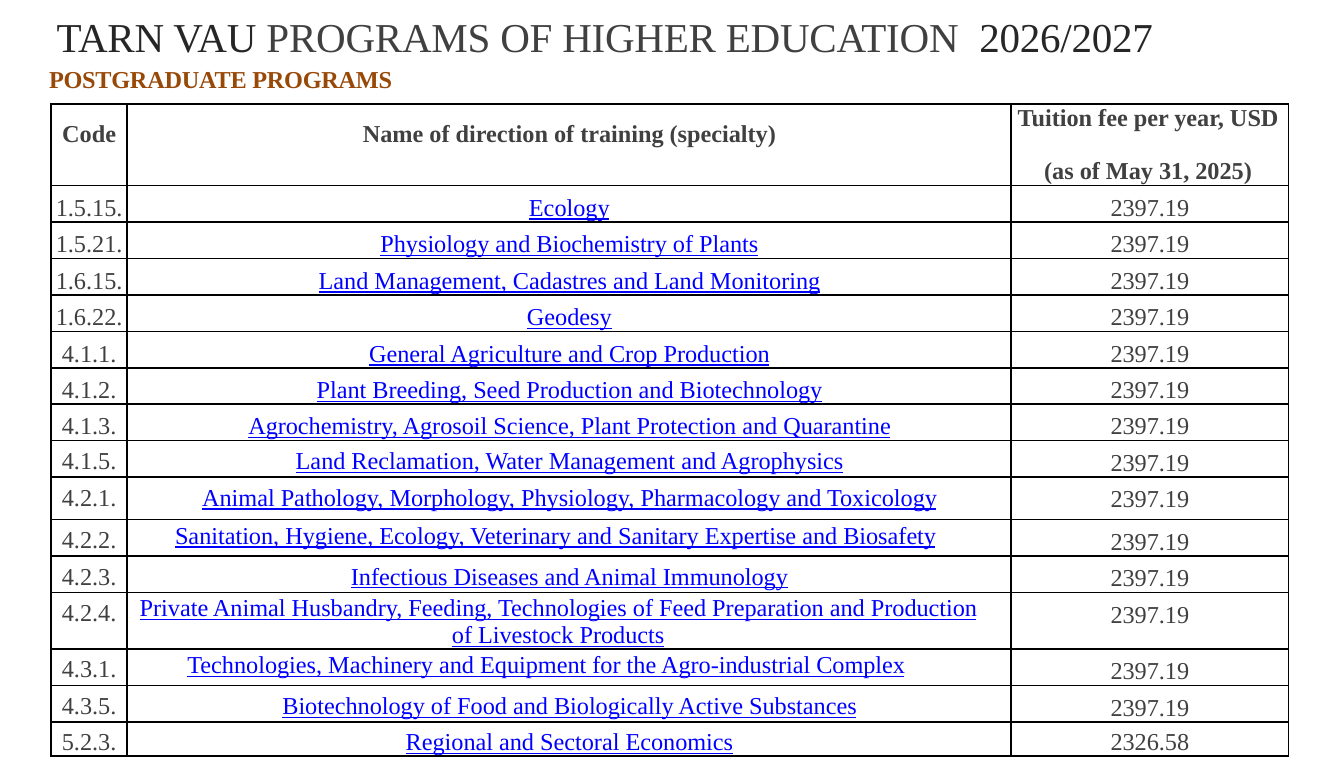
from dataclasses import dataclass

from lxml import etree
from pptx import Presentation
from pptx.dml.color import RGBColor
from pptx.enum.text import MSO_ANCHOR, MSO_AUTO_SIZE, PP_ALIGN
from pptx.oxml.ns import qn
from pptx.util import Pt

CENTER = PP_ALIGN.CENTER
LEFT = PP_ALIGN.LEFT
TOP = MSO_ANCHOR.TOP
NO_AUTOFIT = MSO_AUTO_SIZE.NONE

FONT = "Times New Roman"
DARK, GREY, BROWN, BLUE, BLACK = "262626", "404040", "984807", "0000FF", "000000"
HIGH_INSET, MIDDLE_INSET, LOW_INSET = 1.6, 4, 5
HEADER_INSET = 9.4
HEADER_HEIGHT = 43.7
COLUMN_WIDTHS = (40.9, 473.6, 148.5)


@dataclass
class Program:
    code: str
    name: str
    fee: str = "2397.19"
    height: float = 19.55
    code_inset: float = MIDDLE_INSET
    name_inset: float = MIDDLE_INSET
    name_right: float = 0
    fee_inset: float = LOW_INSET


LOW_PROGRAMS = [
    ("1.5.15.", "Ecology"),
    ("1.5.21.", "Physiology and Biochemistry of Plants"),
    ("1.6.15.", "Land Management, Cadastres and Land Monitoring"),
    ("1.6.22.", "Geodesy"),
    ("4.1.1.", "General Agriculture and Crop Production"),
    ("4.1.2.", "Plant Breeding, Seed Production and Biotechnology"),
    ("4.1.3.", "Agrochemistry, Agrosoil Science, Plant Protection and Quarantine"),
]
PROGRAMS = [
    Program(code, name, code_inset=LOW_INSET, name_inset=LOW_INSET) for code, name in LOW_PROGRAMS
] + [
    Program("4.1.5.", "Land Reclamation, Water Management and Agrophysics"),
    Program("4.2.1.", "Animal Pathology, Morphology, Physiology, Pharmacology and Toxicology", height=22.8),
    Program("4.2.2.", "Sanitation, Hygiene, Ecology, Veterinary and Sanitary Expertise and Biosafety",
            name_inset=HIGH_INSET, name_right=15),
    Program("4.2.3.", "Infectious Diseases and Animal Immunology"),
    Program("4.2.4.", "Private Animal Husbandry, Feeding, Technologies of Feed Preparation "
            "and Production of Livestock Products",
            height=30.3, name_inset=HIGH_INSET, name_right=12),
    Program("4.3.1.", "Technologies, Machinery and Equipment for the Agro-industrial Complex",
            name_inset=HIGH_INSET, name_right=25),
    Program("4.3.5.", "Biotechnology of Food and Biologically Active Substances"),
    Program("5.2.3.", "Regional and Sectoral Economics", fee="2326.58", height=18.2, fee_inset=MIDDLE_INSET),
]


def color(value):
    return RGBColor.from_string(value)


def format_font(font, size, value, bold=False, underline=False):
    font.name = FONT
    font.size = Pt(size)
    font.bold = bold
    font.underline = underline
    font.color.rgb = color(value)


def add_run(paragraph, text, value, spacing=-0.1):
    run = paragraph.add_run()
    run.text = text
    run.font.color.rgb = color(value)
    run._r.get_or_add_rPr().set("spc", str(round(spacing * 100)))


def place_text(shape, left, top, width, height, space_before):
    shape.left, shape.top = Pt(left), Pt(top)
    shape.width, shape.height = Pt(width), Pt(height)
    frame = shape.text_frame
    frame.word_wrap = True
    frame.auto_size = NO_AUTOFIT
    frame.vertical_anchor = TOP
    frame.margin_left = frame.margin_right = frame.margin_bottom = 0
    frame.margin_top = Pt(1)
    paragraph = frame.paragraphs[0]
    paragraph.alignment = LEFT
    paragraph.space_before = Pt(space_before)
    return paragraph


def add_title(slide):
    paragraph = place_text(slide.shapes.title, 30.3, 5, 637, 33, 1.1)
    format_font(paragraph.font, 22, GREY)
    add_run(paragraph, "TARN VAU ", DARK)
    add_run(paragraph, "PROGRAMS OF HIGHER EDUCATION", GREY)
    add_run(paragraph, " ", GREY, spacing=5.5)
    add_run(paragraph, "2026/2027", DARK)


def add_subtitle(slide):
    paragraph = place_text(slide.shapes.add_textbox(0, 0, 0, 0), 26.3, 33.5, 410, 24, 1)
    format_font(paragraph.font, 13, BROWN, bold=True)
    add_run(paragraph, "POSTGRADUATE PROGRAMS", BROWN)


def add_borders(cell):
    properties = cell._tc.get_or_add_tcPr()
    for position, side in enumerate(("lnL", "lnR", "lnT", "lnB")):
        line = etree.Element(qn(f"a:{side}"), w=str(Pt(1)))
        fill = etree.SubElement(line, qn("a:solidFill"))
        etree.SubElement(fill, qn("a:srgbClr"), val=BLACK)
        properties.insert(position, line)


def fill_cell(cell, lines, inset, value=GREY, bold=False, underline=False, right=0):
    cell.margin_left = cell.margin_bottom = 0
    cell.margin_top, cell.margin_right = Pt(inset), Pt(right)
    cell.vertical_anchor = TOP
    cell.fill.background()
    cell.text = "\n".join(lines)
    for paragraph in cell.text_frame.paragraphs:
        paragraph.alignment = CENTER
        format_font(paragraph.font, 13, value, bold, underline)
    add_borders(cell)


def add_program_table(slide):
    heights = [HEADER_HEIGHT] + [program.height for program in PROGRAMS]
    shape = slide.shapes.add_table(
        len(heights), len(COLUMN_WIDTHS), Pt(27.3), Pt(55.7), Pt(sum(COLUMN_WIDTHS)), Pt(sum(heights))
    )
    table = shape.table
    table.first_row = table.horz_banding = False
    for column, width in zip(table.columns, COLUMN_WIDTHS):
        column.width = Pt(width)
    for row, height in zip(table.rows, heights):
        row.height = Pt(height)

    fill_cell(table.cell(0, 0), ["Code"], HEADER_INSET, bold=True)
    fill_cell(table.cell(0, 1), ["Name of direction of training (specialty)"], HEADER_INSET, bold=True)
    fee_header = table.cell(0, 2)
    fill_cell(fee_header, ["Tuition fee per year, USD", "(as of May 31, 2025)"], 0.5, bold=True, right=2)
    fee_header.text_frame.paragraphs[1].space_before = Pt(14)

    for row, program in enumerate(PROGRAMS, start=1):
        fill_cell(table.cell(row, 0), [program.code], program.code_inset)
        fill_cell(table.cell(row, 1), [program.name], program.name_inset, BLUE,
                  underline=True, right=program.name_right)
        fill_cell(table.cell(row, 2), [program.fee], program.fee_inset)


def main():
    presentation = Presentation()
    presentation.slide_width, presentation.slide_height = Pt(720), Pt(419)
    slide = presentation.slides.add_slide(presentation.slide_layouts[5])
    add_title(slide)
    add_subtitle(slide)
    add_program_table(slide)
    presentation.save("out.pptx")


if __name__ == "__main__":
    main()
